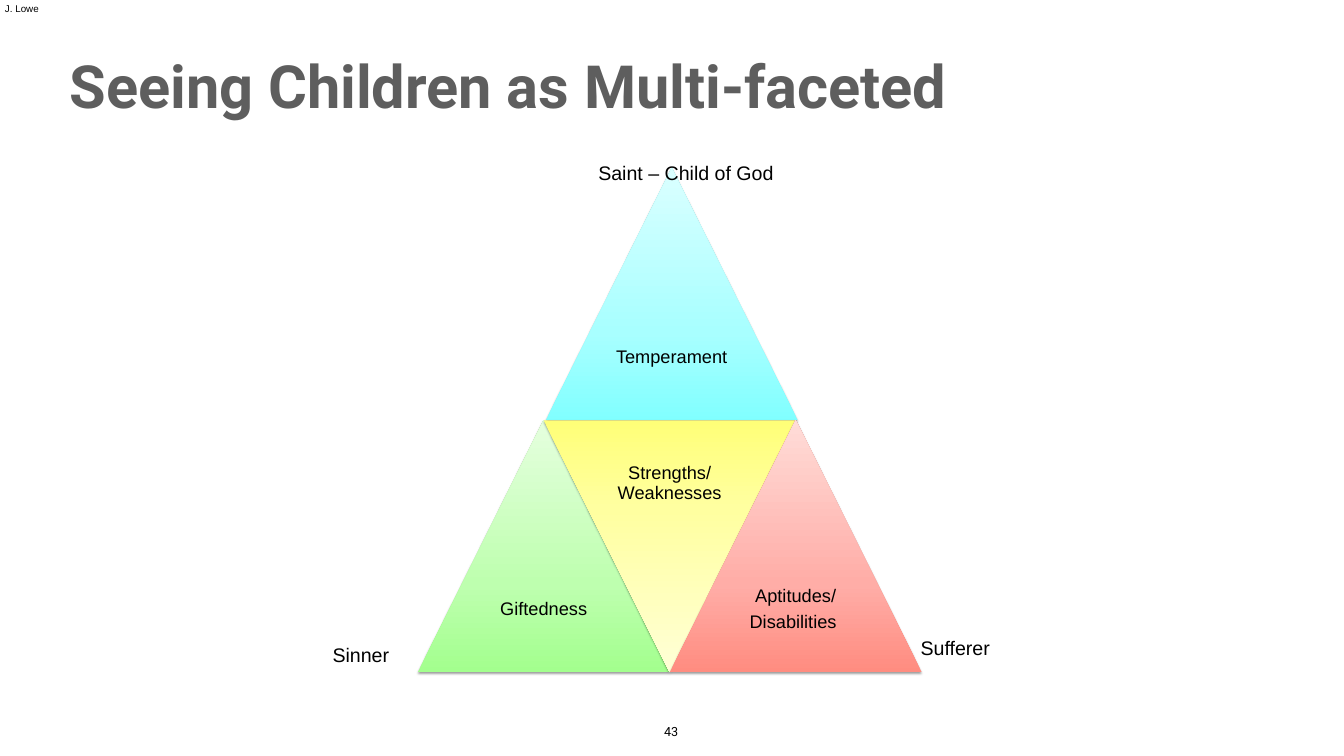
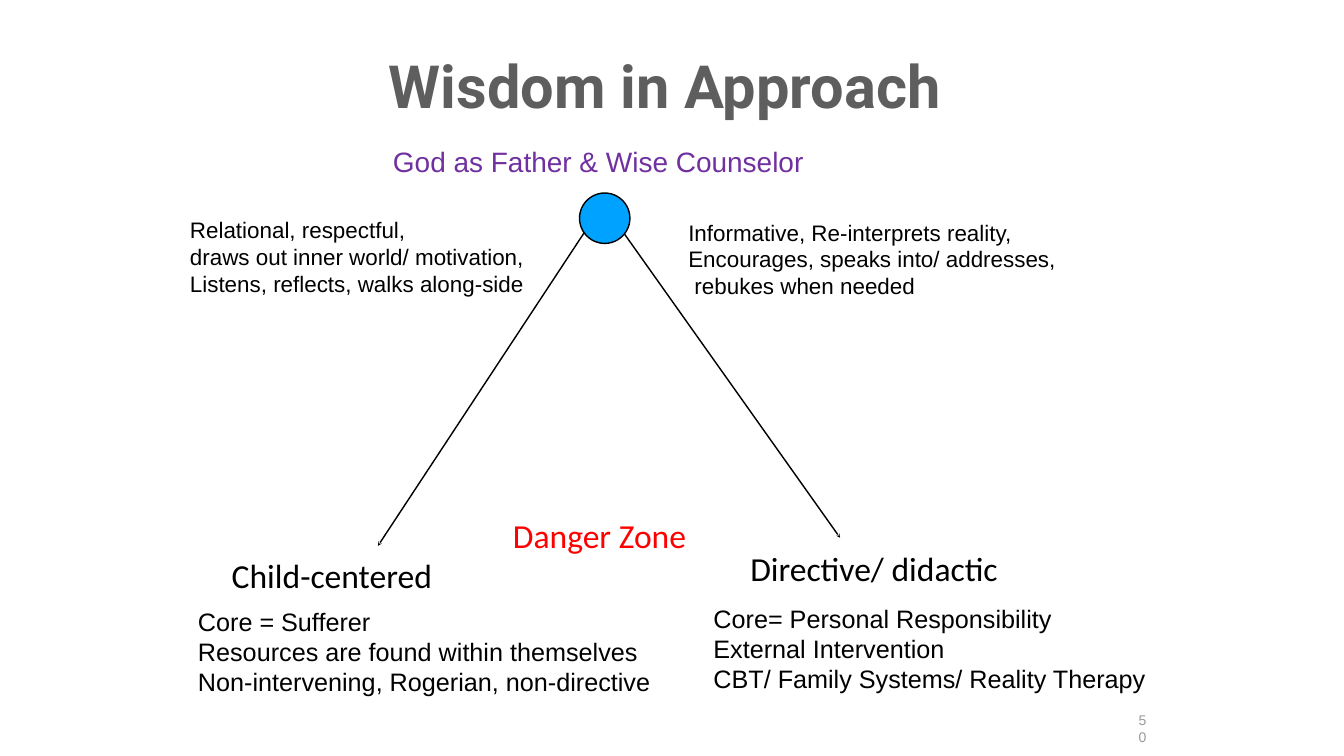
import copy
import pptx
import pptx.dml.color
import pptx.enum.shapes
import pptx.enum.text
import pptx.oxml
import pptx.oxml.ns
import pptx.util

Inches = pptx.util.Inches
Pt = pptx.util.Pt
SHAPE = pptx.enum.shapes.MSO_SHAPE
ALIGN = pptx.enum.text.PP_ALIGN
ANCHOR = pptx.enum.text.MSO_ANCHOR

BLACK = "000000"
GREY = "5E5E5E"
SIDE = 5  # side of one triangle


def color(text):
    return pptx.dml.color.RGBColor.from_string(text)


def parse(xml):
    """Read an XML snippet whose first tag is in the drawing namespace."""
    head, rest = xml.split(" ", 1)
    return pptx.oxml.parse_xml(f"{head} {pptx.oxml.ns.nsdecls('a')} {rest}")


class Deck:
    """Shared style and the slide being built."""

    def __init__(self):
        self.prs = pptx.Presentation()
        self.prs.slide_width = Inches(26.67)
        self.prs.slide_height = Inches(15)
        self.slide = None

    def start(self, title, align=ALIGN.LEFT):
        self.slide = self.prs.slides.add_slide(self.prs.slide_layouts[6])
        self.text([title], 1.32, 1.18, 24.03, 1.57, 85, font="Roboto", hue=GREY,
                  bold=True, align=align, pad=(0.06, 0.06), space=0.8)

    def text(self, lines, x, y, w, h, size, font="Arial", hue=BLACK, bold=False,
             align=ALIGN.LEFT, anchor=ANCHOR.TOP, pad=(0.1, 0.05), space=None,
             gap=0):
        box = self.slide.shapes.add_textbox(Inches(x), Inches(y), Inches(w), Inches(h))
        frame = box.text_frame
        frame.word_wrap = True
        frame.vertical_anchor = anchor
        frame.margin_left = frame.margin_right = Inches(pad[0])
        frame.margin_top = frame.margin_bottom = Inches(pad[1])
        for i, line in enumerate(lines):
            para = frame.add_paragraph() if i else frame.paragraphs[0]
            para.alignment = align
            if space:
                para.line_spacing = space
            if i and gap:
                para.space_before = Pt(gap)
            run = para.add_run()
            run.text = line
            run.font.size = Pt(size)
            run.font.name = font
            run.font.bold = bold
            run.font.color.rgb = color(hue)

    def number(self, text, x, y, w, h, size, font, hue):
        self.text([text], x, y, w, h, size, font, hue, align=ALIGN.CENTER,
                  anchor=ANCHOR.BOTTOM, pad=(0.06, 0.06))

    def facet(self, lines, x, y, hues, flip=False):
        """Shaded triangle with its label in the wide half."""
        shape = self.slide.shapes.add_shape(
            SHAPE.ISOSCELES_TRIANGLE, Inches(x), Inches(y), Inches(SIDE), Inches(SIDE))
        shape.rotation = 180 if flip else 0
        shape.line.fill.background()

        # Three-stop gradient, strongest at the base
        shape.fill.gradient()
        shape.fill.gradient_angle = 90
        stops = shape.element.xpath(".//a:gsLst")[0]
        stops.insert(1, copy.deepcopy(stops[0]))
        for stop, place, hue in zip(shape.fill.gradient_stops, (0, 0.35, 1), hues):
            stop.position = place
            stop.color.rgb = color(hue)

        # Soft shadow below
        shape.shadow.inherit = False
        shape.element.xpath(".//a:effectLst")[0].append(parse(
            f'<a:outerShdw blurRad="{Pt(3.1)}" dist="{Pt(1.6)}" dir="5400000" '
            f'rotWithShape="0"><a:srgbClr val="{BLACK}"><a:alpha val="38000"/>'
            '</a:srgbClr></a:outerShdw>'))

        half = SIDE / 2
        self.text(lines, x + half / 2, y + (0 if flip else half), half, half, 26,
                  align=ALIGN.CENTER, anchor=ANCHOR.MIDDLE, pad=(0.11, 0.11),
                  space=0.9, gap=9.1)

    def arrow(self, x1, y1, x2, y2):
        line = self.slide.shapes.add_connector(
            pptx.enum.shapes.MSO_CONNECTOR.STRAIGHT,
            Inches(x1), Inches(y1), Inches(x2), Inches(y2))
        line.line.color.rgb = color(BLACK)
        line.line.width = Pt(2)
        line.line._get_or_add_ln().append(parse('<a:tailEnd type="stealth"/>'))
        line.element.spPr.append(parse('<a:effectLst />'))

    def dot(self, x, y, size, hue):
        shape = self.slide.shapes.add_shape(
            SHAPE.OVAL, Inches(x), Inches(y), Inches(size), Inches(size))
        shape.shadow.inherit = False
        shape.fill.solid()
        shape.fill.fore_color.rgb = color(hue)
        shape.line.color.rgb = color(BLACK)
        shape.line.width = Pt(2)


def facets(deck):
    deck.start("Seeing Children as Multi-faceted")

    # Large triangle made of four facets
    left, top = 8.29, 3.34
    low = top + SIDE
    deck.facet(["Temperament"], 10.83, top, ("81FFFF", "A8FFFF", "DAFFFF"))
    deck.facet(["Giftedness"], left, low, ("A3FF8E", "BEFFAF", "E5FFDE"))
    deck.facet(["Strengths/ Weaknesses"], left + SIDE / 2, low,
               ("FFFF78", "FFFFA0", "FFFFD6"), flip=True)
    deck.facet(["Aptitudes/", "Disabilities "], left + SIDE, low,
               ("FF8C80", "FFADA7", "FFDCD8"))

    # Author and page number
    deck.text(["J. Lowe"], 0, 0, 3.28, 3.28, 14)
    deck.number("43", 13.02, 14.31, 0.6, 0.41, 18, "Roboto", BLACK)

    # Corner labels
    deck.text(["Saint – Child of God "], 10.83, 3.14, 5.67, 0.57, 28,
              align=ALIGN.CENTER)
    deck.text(["Sinner"], 6.5, 12.7, 1.45, 0.57, 28)
    deck.text(["Sufferer"], 18.17, 12.56, 1.71, 0.57, 28)


def wisdom(deck):
    deck.start("Wisdom in Approach ", ALIGN.CENTER)
    deck.number("50", 22.5, 14.06, 0.34, 0.79, 20, "Arial", "9A9997")

    # Two paths from the centre
    deck.arrow(11.67, 4.5, 7.5, 10.83)
    deck.arrow(12.17, 4.33, 16.67, 10.67)
    deck.dot(11.5, 3.83, 1, "00A2FF")

    # Headings of the ends and the zone between
    for head, x, y, w, hue in (
            ("Child-centered", 4.5, 10.97, 4.3, BLACK),
            ("Directive/ didactic", 14.79, 10.83, 5.37, BLACK),
            ("Danger Zone", 10.08, 10.16, 3.86, "FF0000")):
        deck.text([head], x, y, w, 0.91, 48, "Calibri", hue)

    # Notes below the headings
    deck.text(["Core = Sufferer", "Resources are found within themselves",
               "Non-intervening, Rogerian, non-directive"],
              3.83, 11.98, 9.26, 1.92, 36)
    deck.text(["Core= Personal Responsibility", "External Intervention",
               "CBT/ Family Systems/ Reality Therapy"],
              14.06, 11.92, 9.27, 1.92, 36)

    # Top label and the notes beside it
    deck.text(["God as Father & Wise Counselor"], 7.7, 2.82, 8.43, 0.77, 40,
              hue="7030A0")
    deck.text(["Relational, respectful,", "draws out inner world/ motivation,",
               "Listens, reflects, walks along-side"],
              3.67, 4.24, 6.88, 1.72, 32)
    deck.text(["Informative, Re-interprets reality,",
               "Encourages, speaks into/ addresses,", " rebukes when needed"],
              13.56, 4.29, 7.55, 1.72, 32)


def main():
    deck = Deck()
    facets(deck)
    wisdom(deck)
    deck.prs.save("out.pptx")


if __name__ == "__main__":
    main()
